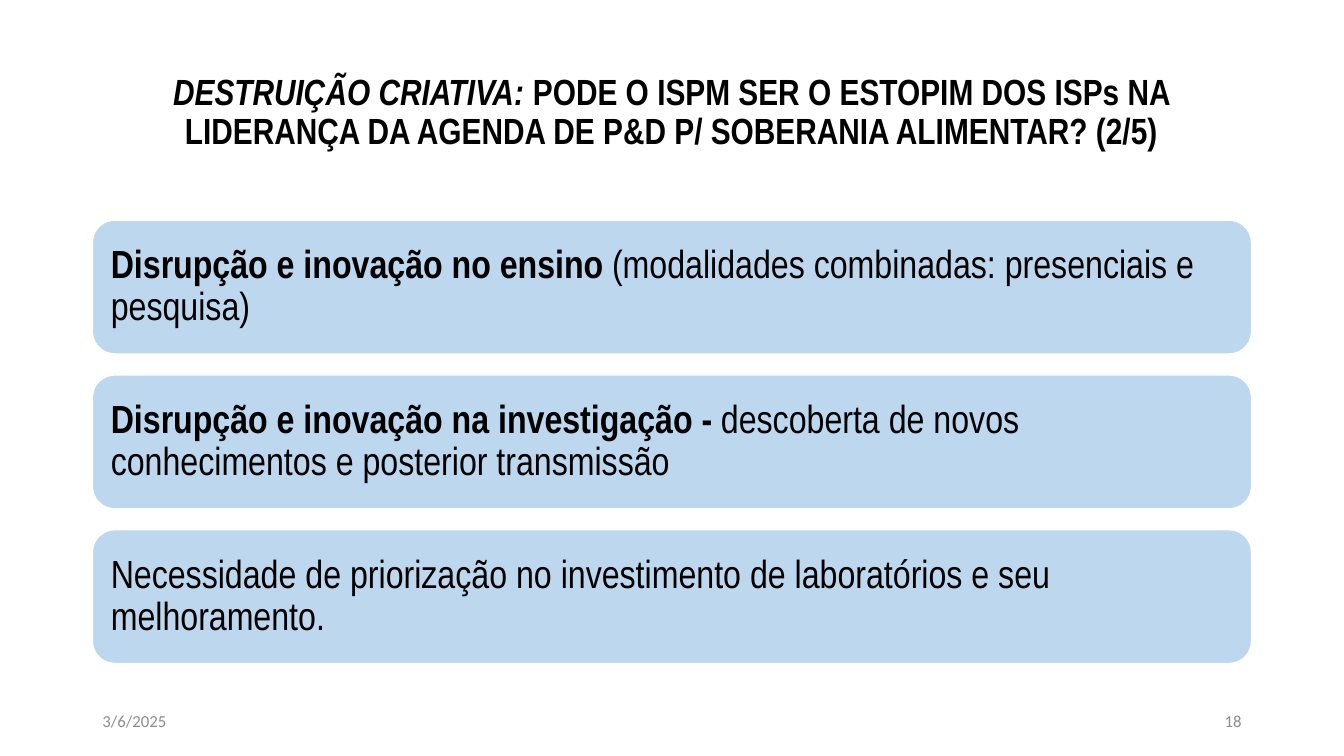
from pptx import Presentation
from pptx import util as u
from pptx.dml.color import RGBColor
from pptx.enum import shapes, text

LEFT, WIDTH = 2.33, 29.21
CARD_TOP, CARD_HEIGHT, CARD_PITCH = 5.55, 3.37, 3.9
FOOTER_TOP, FOOTER_WIDTH, FOOTER_HEIGHT = 17.65, 7.62, 1.01

TITLE = [
    ("DESTRUIÇÃO CRIATIVA: ", {"bold": True, "italic": True}),
    ("PODE O ISPM SER O ESTOPIM DOS ISPs NA LIDERANÇA DA AGENDA DE P&D "
     "P/ SOBERANIA ALIMENTAR? (2/5)", {"bold": True, "italic": False}),
]
CARDS = [
    [("Disrupção e inovação no ensino", {"bold": True}),
     (" (modalidades combinadas: presenciais e pesquisa)", {})],
    [("Disrupção e inovação na investigação -", {"bold": True}),
     (" descoberta de novos conhecimentos e posterior transmissão", {})],
    [("Necessidade de priorização no investimento de laboratórios "
      "e seu melhoramento.", {})],
]


def color(hex_string):
    return RGBColor.from_string(hex_string)


def apply(target, formats):
    """Set each named attribute of the target to its value."""
    for name, value in formats.items():
        setattr(target, name, value)


class SlideBuilder:
    heading = {"name": "Arial Narrow", "size": u.Pt(26)}
    body = {"name": "Arial Narrow", "size": u.Pt(28)}
    small = {"name": "Calibri", "size": u.Pt(12)}
    ink, gray, card_fill, card_line = "000000", "8C8C8C", "BDD7EE", "FFFFFF"

    def __init__(self, presentation):
        self.slide = presentation.slides.add_slide(presentation.slide_layouts[5])

    def add_text(self, shape, runs, font, ink, align, spacing=1.0):
        """Fill a shape with one paragraph of (text, format) runs."""
        apply(shape.text_frame, {
            "word_wrap": True,
            "auto_size": text.MSO_AUTO_SIZE.NONE,
            "vertical_anchor": text.MSO_ANCHOR.MIDDLE,
        })
        paragraph = shape.text_frame.paragraphs[0]
        apply(paragraph, {"alignment": align, "line_spacing": spacing})
        for words, formats in runs:
            run = paragraph.add_run()
            run.text = words
            apply(run.font, {**font, **formats})
            run.font.color.rgb = color(ink)

    def title(self, runs):
        shape = self.slide.shapes.title
        apply(shape, {"left": u.Cm(LEFT), "top": u.Cm(1.01),
                      "width": u.Cm(WIDTH), "height": u.Cm(3.68)})
        self.add_text(shape, runs, self.heading, self.ink, text.PP_ALIGN.CENTER, 0.9)

    def card(self, top, runs):
        shape = self.slide.shapes.add_shape(
            shapes.MSO_SHAPE.ROUNDED_RECTANGLE,
            u.Cm(LEFT), u.Cm(top), u.Cm(WIDTH), u.Cm(CARD_HEIGHT))
        shape.shadow.inherit = False
        shape.fill.solid()
        shape.fill.fore_color.rgb = color(self.card_fill)
        shape.line.color.rgb = color(self.card_line)
        shape.line.width = u.Pt(1)
        margins = ("margin_left", "margin_top", "margin_right", "margin_bottom")
        apply(shape.text_frame, dict.fromkeys(margins, u.Cm(0.3)))
        self.add_text(shape, runs, self.body, self.ink, text.PP_ALIGN.LEFT, 0.9)

    def footer(self, left, words, align):
        shape = self.slide.shapes.add_textbox(
            u.Cm(left), u.Cm(FOOTER_TOP), u.Cm(FOOTER_WIDTH), u.Cm(FOOTER_HEIGHT))
        self.add_text(shape, [(words, {})], self.small, self.gray, align)


def main():
    presentation = Presentation()
    apply(presentation, {"slide_width": u.Cm(33.87), "slide_height": u.Cm(19.05)})
    builder = SlideBuilder(presentation)
    builder.title(TITLE)
    for index, runs in enumerate(CARDS):
        builder.card(CARD_TOP + index * CARD_PITCH, runs)
    builder.footer(LEFT, "3/6/2025", text.PP_ALIGN.LEFT)
    builder.footer(LEFT + WIDTH - FOOTER_WIDTH, "18", text.PP_ALIGN.RIGHT)
    presentation.save("out.pptx")


if __name__ == "__main__":
    main()
